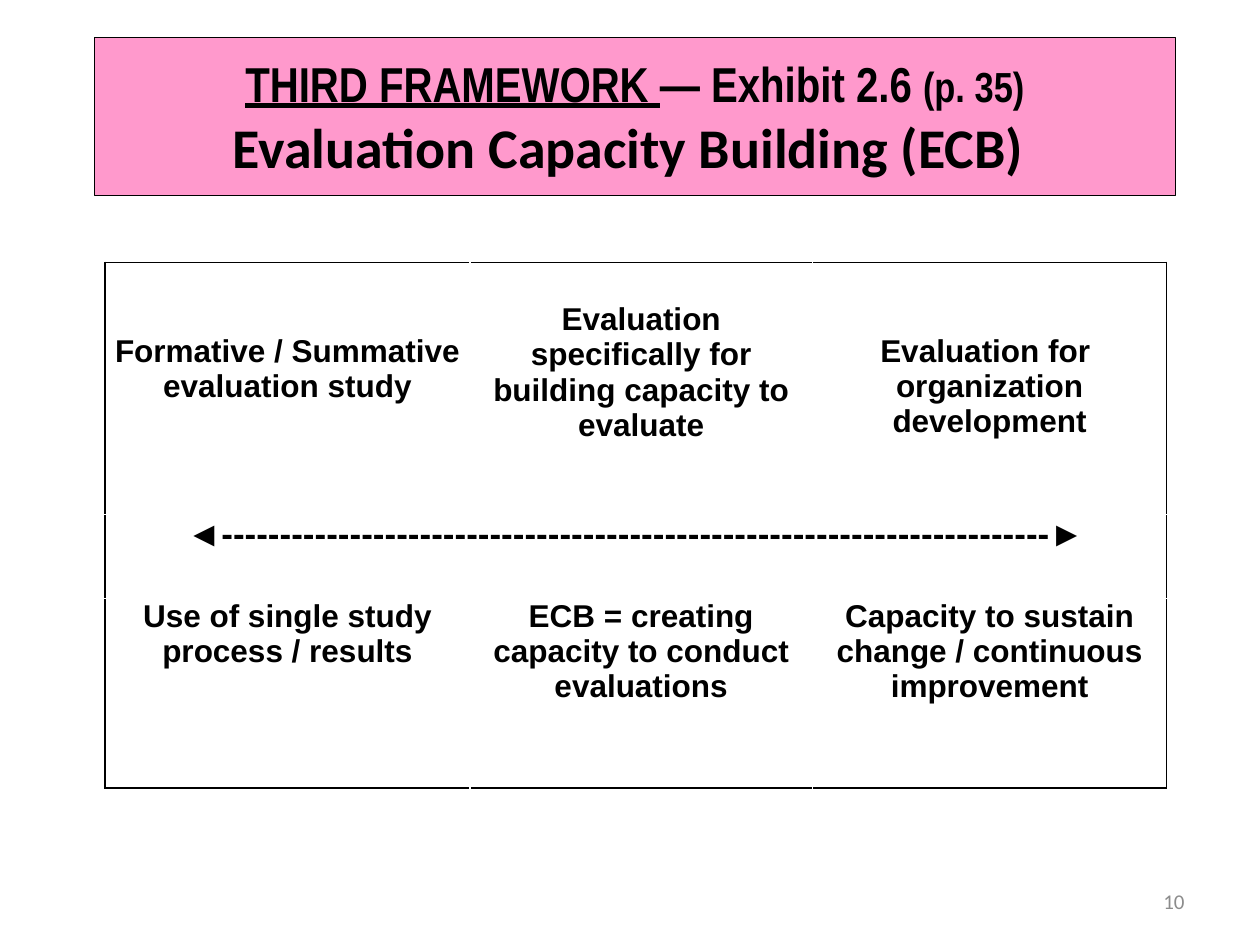
from lxml.etree import SubElement as Sub
from pptx import Presentation
from pptx.dml.color import RGBColor
from pptx.enum.text import MSO_ANCHOR as Anchor, PP_ALIGN as Align
from pptx.oxml.ns import qn
from pptx.util import Cm, Pt


def style(font, name, size, color="000000", bold=True):
    font.name, font.size, font.bold = name, Pt(size), bold
    font.color.rgb = RGBColor.from_string(color)


def edge(cell, side):
    line = Sub(cell._tc.get_or_add_tcPr(), qn("a:ln" + side), w=str(Pt(1)))
    fill = Sub(line, qn("a:solidFill"))
    Sub(fill, qn("a:srgbClr"), val="000000")


deck = Presentation()
deck.slide_width, deck.slide_height = Cm(25.4), Cm(19.05)
slide = deck.slides.add_slide(deck.slide_layouts[5])

title = slide.shapes.title
title.left, title.top, title.width, title.height = Cm(1.9), Cm(0.76), Cm(21.8), Cm(3.18)
title.fill.solid()
title.fill.fore_color.rgb = RGBColor.from_string("FF99CC")
title.line.color.rgb = RGBColor.from_string("000000")
title.line.width = Pt(0.75)
title.text_frame.vertical_anchor = Anchor.MIDDLE
head = title.text_frame.paragraphs[0]
head.alignment = Align.CENTER
for text, name, size in [
    ("THIRD FRAMEWORK ", "Arial Narrow", 28),
    ("— Exhibit 2.6 ", "Arial Narrow", 28),
    ("(p. 35)", "Arial Narrow", 24),
    ("Evaluation Capacity Building (ECB) ", "Calibri", 32),
]:
    if name == "Calibri":
        head.add_line_break()
    run = head.add_run()
    run.text = text
    style(run.font, name, size)
head.runs[0].font.underline = True

rows = [
    [
        ("Formative / Summative\nevaluation study", 18, 1.44),
        ("Evaluation specifically for building capacity to evaluate", 18, 0.8),
        ("Evaluation for \norganization development", 18, 1.44),
    ],
    [("◄" + "-" * 71 + "►", 20, 0)],
    [
        ("Use of single study\nprocess / results", 18, 0),
        ("ECB = creating capacity to conduct evaluations", 18, 0),
        ("Capacity to sustain change / continuous improvement", 18, 0),
    ],
]
frame = slide.shapes.add_table(3, 3, Cm(2.12), Cm(5.29), Cm(21.4), Cm(10.6))
table = frame.table
table.first_row = table.horz_banding = False
for col, width in zip(table.columns, [7.35, 6.91, 7.14]):
    col.width = Cm(width)
for row, height in zip(table.rows, [5.08, 1.7, 3.82]):
    row.height = Cm(height)
table.cell(1, 0).merge(table.cell(1, 2))

for r in range(3):
    for c in range(3):
        cell = table.cell(r, c)
        cell.margin_left = cell.margin_right = Cm(0.18)
        cell.margin_top = cell.margin_bottom = 0
        if c < len(rows[r]):
            text, size, gap = rows[r][c]
            cell.text = text
            cell.margin_top = Cm(gap)
            for para in cell.text_frame.paragraphs:
                para.alignment = Align.CENTER
                style(para.font, "Arial", size)
        last = c + 1 == len(rows[r]) or c == 2
        for side, outer in [("L", c == 0), ("R", last), ("T", r == 0), ("B", r == 2)]:
            if outer:
                edge(cell, side)
        cell.fill.background()

box = slide.shapes.add_textbox(Cm(18.2), Cm(17.65), Cm(5.93), Cm(1.02))
box.text_frame.word_wrap = True
box.text_frame.vertical_anchor = Anchor.MIDDLE
page = box.text_frame.paragraphs[0]
page.text = "10"
page.alignment = Align.RIGHT
style(page.font, "Calibri", 12, "8C8C8C", False)

deck.save("out.pptx")
